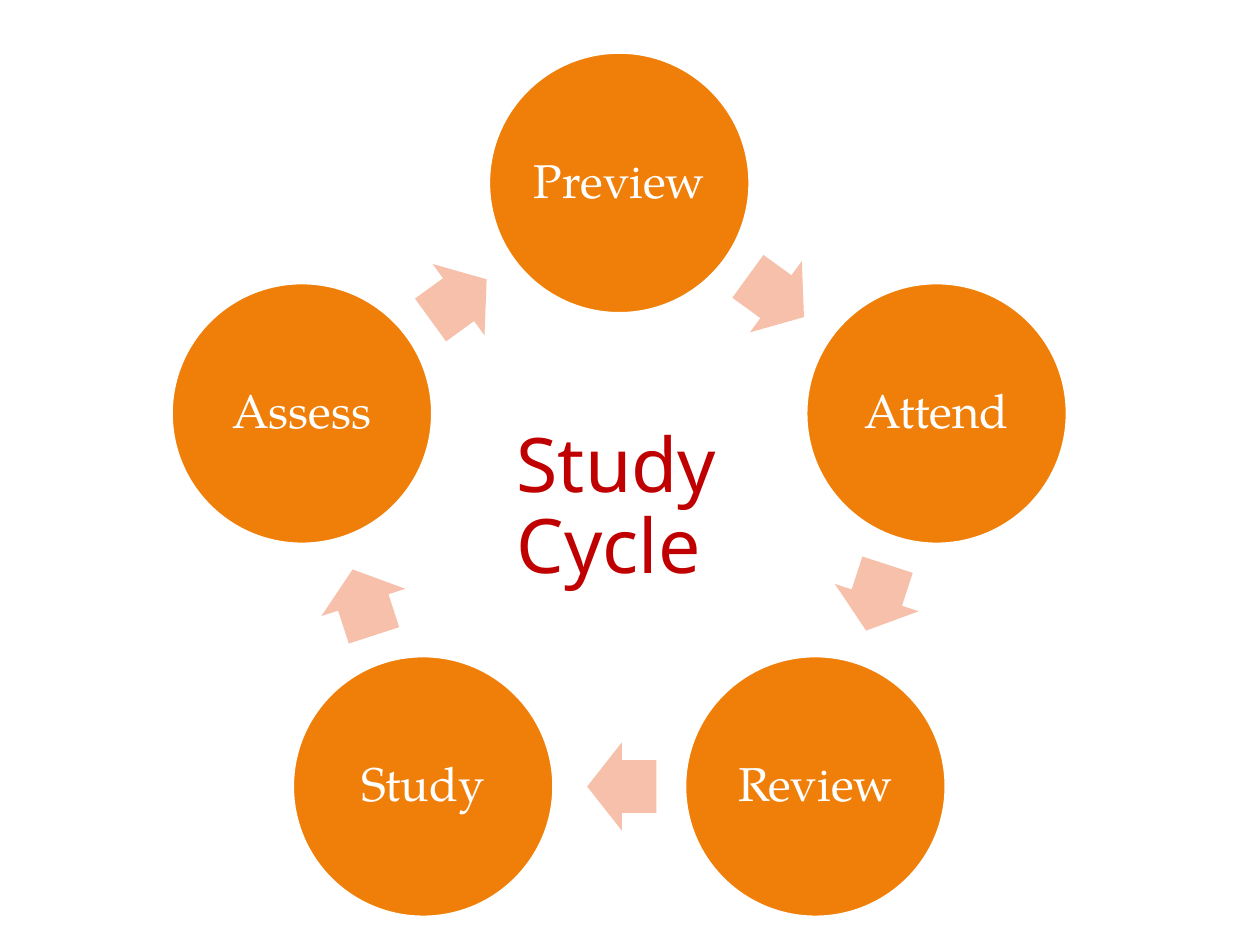
from math import cos, radians, sin

from pptx import Presentation
from pptx.dml.color import RGBColor
from pptx.enum.shapes import MSO_SHAPE as Shape
from pptx.enum.text import MSO_ANCHOR as Anchor, MSO_AUTO_SIZE as AutoSize, PP_ALIGN as Align
from pptx.util import Inches, Pt

ORANGE = RGBColor(0xF0, 0x7F, 0x09)
PEACH = RGBColor(0xF6, 0xC0, 0xAB)
RED = RGBColor(0xC0, 0x00, 0x00)
WHITE = RGBColor(0xFF, 0xFF, 0xFF)

STAGES = ["Preview", "Attend", "Review", "Study", "Assess"]
STEP = 360 / len(STAGES)
CENTER_COLUMN, CENTER_ROW, RADIUS = 49.15, 41, 26.48
ARROW_SETBACK = 0.2


class CycleSlide:
    """Style and current slide, measured on a grid of 100 columns by 75 rows."""

    stage_font = "TeX Gyre Pagella"
    title_font = "Noto Sans"
    stage_size = Pt(27)
    title_size = Pt(43)
    inset = Inches(0.04)
    diameter = 20.7
    arrow_size = (5.5, 7)

    def __init__(self, presentation):
        presentation.slide_width = Inches(10)
        presentation.slide_height = Inches(7.5)
        self.cell = presentation.slide_width / 100
        self.slide = presentation.slides.add_slide(presentation.slide_layouts[5])

    def lengths(self, *cells):
        return [round(count * self.cell) for count in cells]

    def add_text(self, paragraph, text, font, size, color):
        paragraph.line_spacing = 0.9
        run = paragraph.add_run()
        run.text = text
        run.font.name = font
        run.font.size = size
        run.font.color.rgb = color

    def title(self, text, column, row, columns, rows):
        shape = self.slide.shapes.title
        shape.left, shape.top, shape.width, shape.height = self.lengths(column, row, columns, rows)
        frame = shape.text_frame
        frame.word_wrap = True
        frame.auto_size = AutoSize.NONE
        frame.vertical_anchor = Anchor.MIDDLE
        paragraph = frame.paragraphs[0]
        paragraph.alignment = Align.LEFT
        self.add_text(paragraph, text, self.title_font, self.title_size, RED)

    def centered_shape(self, kind, column, row, columns, rows, color):
        box = self.lengths(column - columns / 2, row - rows / 2, columns, rows)
        shape = self.slide.shapes.add_shape(kind, *box)
        shape.shadow.inherit = False
        shape.fill.solid()
        shape.fill.fore_color.rgb = color
        return shape

    def stage(self, text, column, row):
        shape = self.centered_shape(Shape.OVAL, column, row, self.diameter, self.diameter, ORANGE)
        shape.line.color.rgb = WHITE
        shape.line.width = Pt(1.5)
        frame = shape.text_frame
        frame.word_wrap = True
        frame.vertical_anchor = Anchor.MIDDLE
        frame.margin_left = frame.margin_right = self.inset
        frame.margin_top = frame.margin_bottom = self.inset
        paragraph = frame.paragraphs[0]
        paragraph.alignment = Align.CENTER
        self.add_text(paragraph, text, self.stage_font, self.stage_size, WHITE)

    def arrow(self, column, row, rotation):
        shape = self.centered_shape(Shape.RIGHT_ARROW, column, row, *self.arrow_size, PEACH)
        shape.line.fill.background()
        shape.adjustments[0] = 0.6
        shape.adjustments[1] = 0.5
        shape.rotation = rotation


def ring_point(angle, radius):
    turn = radians(angle)
    return CENTER_COLUMN + radius * sin(turn), CENTER_ROW - radius * cos(turn)


def main():
    presentation = Presentation()
    cycle = CycleSlide(presentation)
    cycle.title("Study Cycle", 40, 32.5, 23.3, 15.8)
    chord_radius = RADIUS * cos(radians(STEP / 2))
    for index, name in enumerate(STAGES):
        cycle.stage(name, *ring_point(index * STEP, RADIUS))
        heading = (index + 0.5) * STEP
        column, row = ring_point(heading, chord_radius)
        turn = radians(heading)
        cycle.arrow(column - ARROW_SETBACK * cos(turn), row - ARROW_SETBACK * sin(turn), heading)
    presentation.save("out.pptx")


if __name__ == "__main__":
    main()
